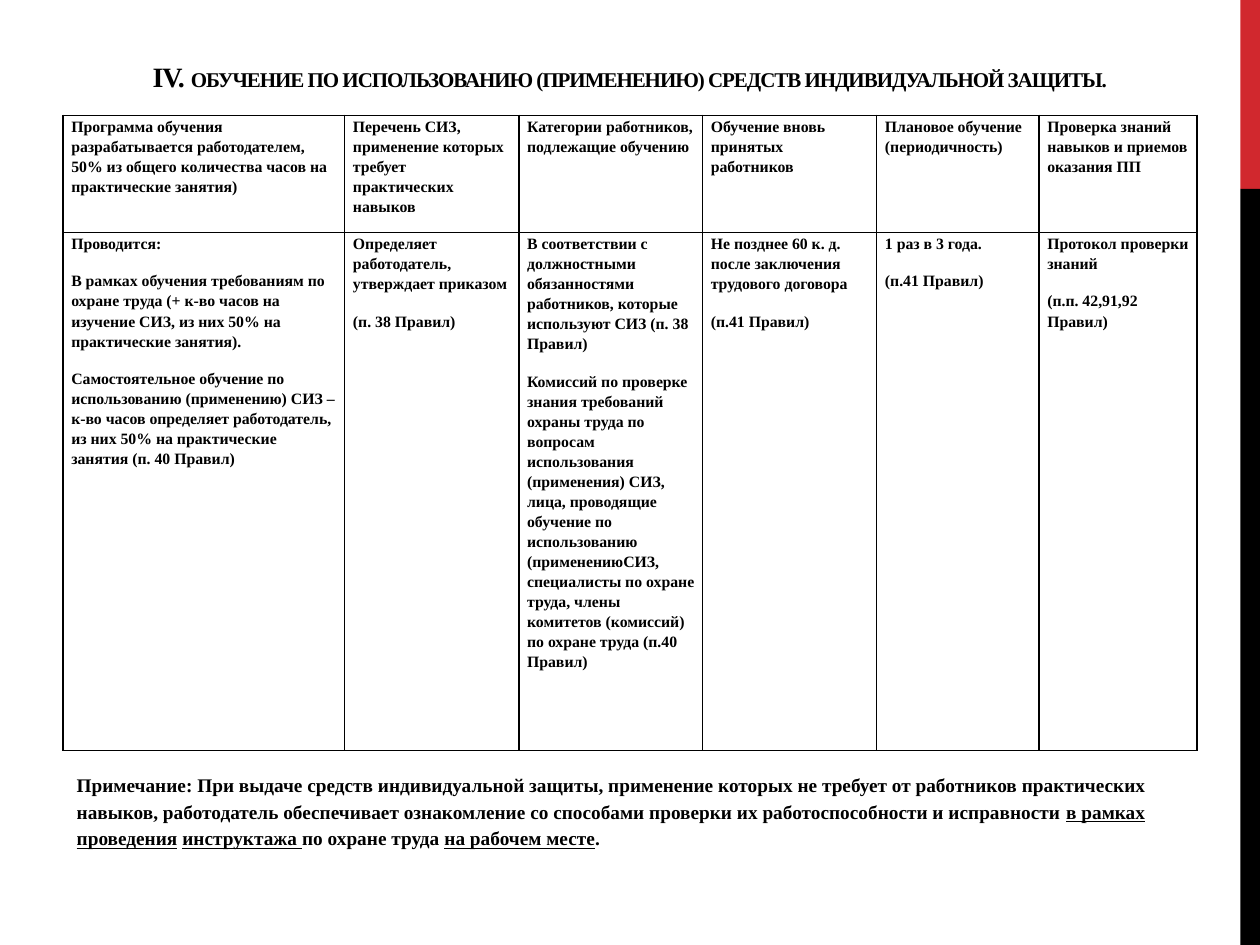
from lxml.etree import SubElement
from pptx import Presentation
from pptx.dml.color import RGBColor
from pptx.enum.shapes import MSO_SHAPE
from pptx.enum.text import MSO_ANCHOR, MSO_AUTO_SIZE, PP_ALIGN
from pptx.oxml import parse_xml
from pptx.oxml.ns import nsdecls
from pptx.util import Pt

BLACK = "000000"
RED = "D1282E"


def color(hex_code):
    return RGBColor.from_string(hex_code)


def add_run(paragraph, text, size, underline=False):
    paragraph.line_spacing = 1.15
    paragraph.space_after = Pt(10)
    run = paragraph.add_run()
    run.text = text
    run.font.name = "Times New Roman"
    run.font.size = Pt(size)
    run.font.bold = True
    run.font.underline = underline
    run.font.color.rgb = color(BLACK)
    return run


prs = Presentation()
prs.slide_width, prs.slide_height = Pt(720), Pt(540)
slide = prs.slides.add_slide(prs.slide_layouts[5])

# Side stripe
for top, height, stripe_color in [(0, 108, RED), (108, 432, BLACK)]:
    stripe = slide.shapes.add_shape(
        MSO_SHAPE.RECTANGLE, Pt(708.75), Pt(top), Pt(11.25), Pt(height))
    stripe.shadow.inherit = False
    stripe.fill.solid()
    stripe.fill.fore_color.rgb = color(stripe_color)
    stripe.line.fill.background()

# Title
title = slide.shapes.title
title.left, title.top, title.width, title.height = Pt(36), Pt(21.5), Pt(648), Pt(49.5)
heading = title.text_frame
heading.auto_size = MSO_AUTO_SIZE.NONE
heading.vertical_anchor = MSO_ANCHOR.BOTTOM
heading.margin_bottom = Pt(18)
heading.paragraphs[0].alignment = PP_ALIGN.CENTER
for text, size in [
    ("IV. ", 16),
    ("ОБУЧЕНИЕ ПО ИСПОЛЬЗОВАНИЮ (ПРИМЕНЕНИЮ) СРЕДСТВ ИНДИВИДУАЛЬНОЙ ЗАЩИТЫ.", 12),
]:
    run = add_run(heading.paragraphs[0], text, size)
    run.font._element.set("spc", "-60")

# Training table: each column holds its width, header and paragraphs
columns = [
    (161, "Программа обучения разрабатывается работодателем, 50% из общего "
          "количества часов на практические занятия)",
     ["Проводится:",
      "В рамках обучения требованиям по охране труда (+ к-во часов на изучение "
      "СИЗ, из них 50% на практические занятия).",
      "Самостоятельное обучение по использованию (применению) СИЗ – к-во часов "
      "определяет работодатель, из них 50% на практические занятия (п. 40 Правил)"]),
    (99.5, "Перечень СИЗ, применение которых требует практических навыков",
     ["Определяет работодатель, утверждает приказом", "(п. 38 Правил)"]),
    (105, "Категории работников, подлежащие обучению",
     ["В соответствии с должностными обязанностями работников, которые "
      "используют СИЗ (п. 38 Правил)",
      "Комиссий по проверке знания требований охраны труда по вопросам "
      "использования (применения) СИЗ, лица, проводящие обучение по использованию "
      "(применениюСИЗ, специалисты по охране труда, члены комитетов (комиссий) "
      "по охране труда (п.40 Правил)"]),
    (99.5, "Обучение вновь принятых работников",
     ["Не позднее 60 к. д. после заключения трудового договора", "(п.41 Правил)"]),
    (92.75, "Плановое обучение (периодичность)",
     ["1 раз в 3 года.", "(п.41 Правил)"]),
    (90.25, "Проверка знаний навыков и приемов оказания ПП",
     ["Протокол проверки знаний", "(п.п. 42,91,92 Правил)"]),
]
row_heights = [67, 296]
training = slide.shapes.add_table(
    len(row_heights), len(columns), Pt(36), Pt(66), Pt(648), Pt(sum(row_heights))).table
training.first_row = False
training.horz_banding = False
for row, height in zip(training.rows, row_heights):
    row.height = Pt(height)

for col, (width, header, details) in enumerate(columns):
    training.columns[col].width = Pt(width)
    for row, paragraphs in enumerate([[header], details]):
        cell = training.cell(row, col)
        cell.margin_left = cell.margin_right = Pt(4.75)
        cell.margin_top = cell.margin_bottom = 0
        cell.fill.background()
        cell_props = cell._tc.get_or_add_tcPr()
        for position, side in enumerate(["lnL", "lnR", "lnT", "lnB"]):
            border = parse_xml(f'<a:{side} {nsdecls("a")} w="12700"><a:solidFill>'
                               f'<a:srgbClr val="{BLACK}"/></a:solidFill></a:{side}>')
            cell_props.insert(position, border)
        for number, text in enumerate(paragraphs):
            frame = cell.text_frame
            paragraph = frame.add_paragraph() if number else frame.paragraphs[0]
            add_run(paragraph, text, 9)

# Note under the table
note = slide.shapes.add_textbox(Pt(36.75), Pt(436.5), Pt(646.5), Pt(52.5)).text_frame
note.word_wrap = True
for text, underline in [
    ("Примечание: При выдаче средств индивидуальной защиты, применение которых не "
     "требует от работников практических навыков, работодатель обеспечивает "
     "ознакомление со способами проверки их работоспособности и исправности ", False),
    ("в рамках проведения", True),
    (" ", False),
    ("инструктажа ", True),
    ("по охране труда ", False),
    ("на рабочем месте", True),
    (".", False),
]:
    add_run(note.paragraphs[0], text, 11, underline)

prs.save("out.pptx")
